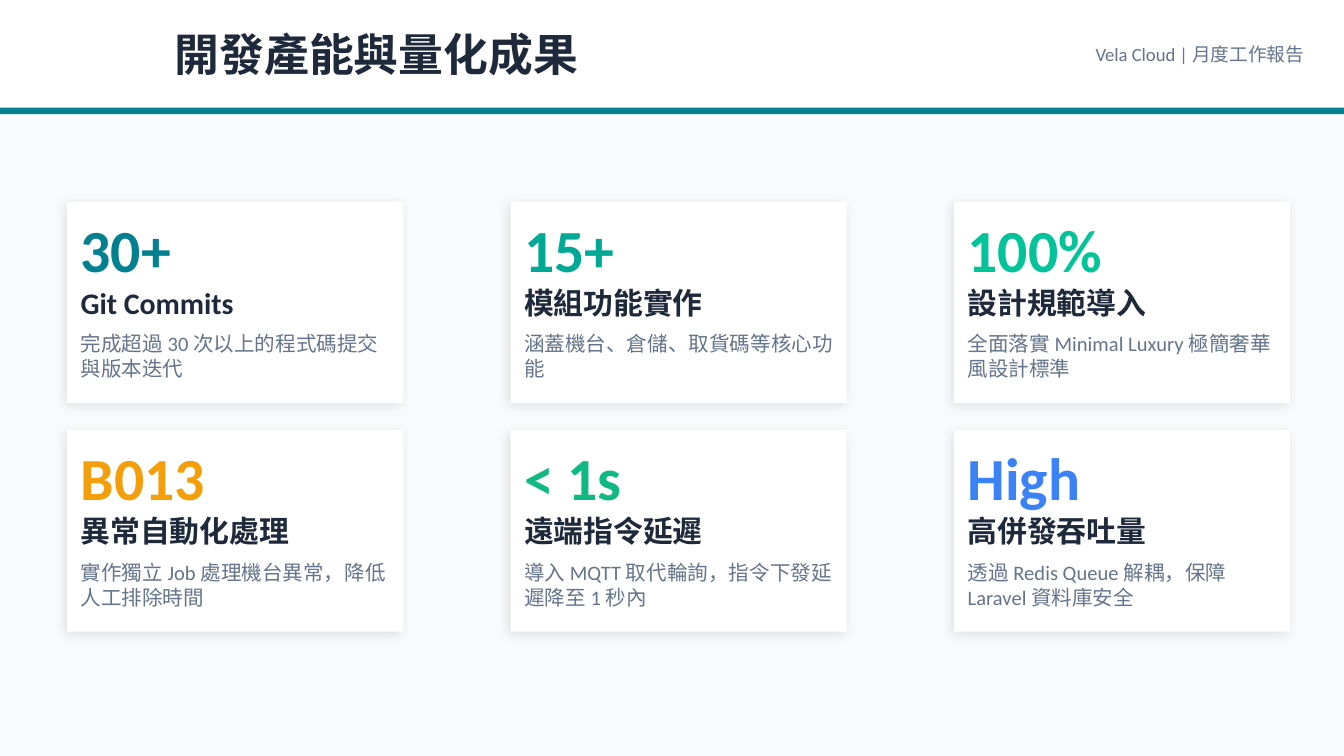
from lxml import etree
from pptx import Presentation
from pptx.dml.color import RGBColor
from pptx.enum.shapes import MSO_SHAPE
from pptx.enum.text import MSO_ANCHOR, MSO_AUTO_SIZE, PP_ALIGN
from pptx.oxml.ns import qn
from pptx.util import Inches, Pt

RECT = MSO_SHAPE.RECTANGLE
MIDDLE = MSO_ANCHOR.MIDDLE
NO_FIT = MSO_AUTO_SIZE.NONE
LEFT, RIGHT = PP_ALIGN.LEFT, PP_ALIGN.RIGHT

FONT = "Calibri"
WHITE, PAPER, TEAL = "FFFFFF", "F8FAFC", "028090"
INK, MUTED = "1E293B", "64748B"

CARDS = [
    ("30+", TEAL, "Git Commits", "完成超過 30 次以上的程式碼提交與版本迭代"),
    ("15+", "00A896", "模組功能實作", "涵蓋機台、倉儲、取貨碼等核心功能"),
    ("100%", "02C39A", "設計規範導入", "全面落實 Minimal Luxury 極簡奢華風設計標準"),
    ("B013", "F59E0B", "異常自動化處理", "實作獨立 Job 處理機台異常，降低人工排除時間"),
    ("< 1s", "10B981", "遠端指令延遲", "導入 MQTT 取代輪詢，指令下發延遲降至 1 秒內"),
    ("High", "3B82F6", "高併發吞吐量", "透過 Redis Queue 解耦，保障 Laravel 資料庫安全"),
]
COLS = 3


def paint(fill, color):
    fill.solid()
    fill.fore_color.rgb = RGBColor.from_string(color)


def add_rect(slide, x, y, w, h, color):
    rect = slide.shapes.add_shape(RECT, Inches(x), Inches(y), Inches(w), Inches(h))
    paint(rect.fill, color)
    rect.line.fill.background()
    rect.shadow.inherit = False
    return rect


def add_shadow(shape):
    effects = shape.element.spPr.find(qn("a:effectLst"))
    shadow = etree.SubElement(
        effects, qn("a:outerShdw"), blurRad=str(Pt(6)), dist=str(Pt(2)),
        dir=str(135 * 60000), algn="bl", rotWithShape="0")
    color = etree.SubElement(shadow, qn("a:srgbClr"), val="000000")
    etree.SubElement(color, qn("a:alpha"), val="10000")


def set_text(shape, text, size, color, bold=False, align=LEFT, inset=True):
    frame = shape.text_frame
    frame.text = text
    frame.word_wrap = True
    frame.auto_size = NO_FIT
    frame.vertical_anchor = MIDDLE
    if not inset:
        frame.margin_left = frame.margin_right = 0
        frame.margin_top = frame.margin_bottom = 0
    para = frame.paragraphs[0]
    para.alignment = align
    font = para.font
    font.name, font.size, font.bold = FONT, Pt(size), bold
    font.color.rgb = RGBColor.from_string(color)


def add_text(slide, x, y, w, h, *args, **style):
    box = slide.shapes.add_textbox(Inches(x), Inches(y), Inches(w), Inches(h))
    set_text(box, *args, **style)


def add_header(slide, x, y, w, h):
    # White band with a teal rule below it
    add_rect(slide, x, y, w, h, WHITE)
    rule = add_rect(slide, x, y + h, w, 0.05, TEAL)
    add_text(slide, x + w - 2, y + 0.2, 1.8, 0.4,
             "Vela Cloud | 月度工作報告", 10, MUTED, align=RIGHT)

    # Title, lifted above the band
    title = slide.shapes.title
    title.left, title.top = Inches(x + 1.3), Inches(y + 0.1)
    title.width, title.height = Inches(8), Inches(h - 0.2)
    set_text(title, "開發產能與量化成果", 24, INK, bold=True, inset=False)
    rule.element.addnext(title.element)


def add_card(slide, x, y, w, h, value, color, label, note):
    add_shadow(add_rect(slide, x, y, w, h, WHITE))
    pad = 0.1
    left, top, width = x + pad, y + pad, w - 2 * pad
    rows = [(value, 0.5, 32, color, True),
            (label, 0.3, 16, INK, True),
            (note, 0.5, 11, MUTED, False)]
    for text, height, size, tint, bold in rows:
        add_text(slide, left, top, width, height,
                 text, size, tint, bold=bold, inset=False)
        top += height


def add_grid(slide, x, y, w, h, gap_x, gap_y):
    for i, card in enumerate(CARDS):
        row, col = divmod(i, COLS)
        add_card(slide, x + col * (w + gap_x), y + row * (h + gap_y), w, h, *card)


def main():
    prs = Presentation()
    prs.slide_width, prs.slide_height = Inches(10), Inches(5.625)
    slide = prs.slides.add_slide(prs.slide_layouts[5])
    paint(slide.background.fill, PAPER)
    add_header(slide, 0, 0, 10, 0.8)
    add_grid(slide, 0.5, 1.5, 2.5, 1.5, gap_x=0.8, gap_y=0.2)
    prs.save("out.pptx")


if __name__ == "__main__":
    main()
